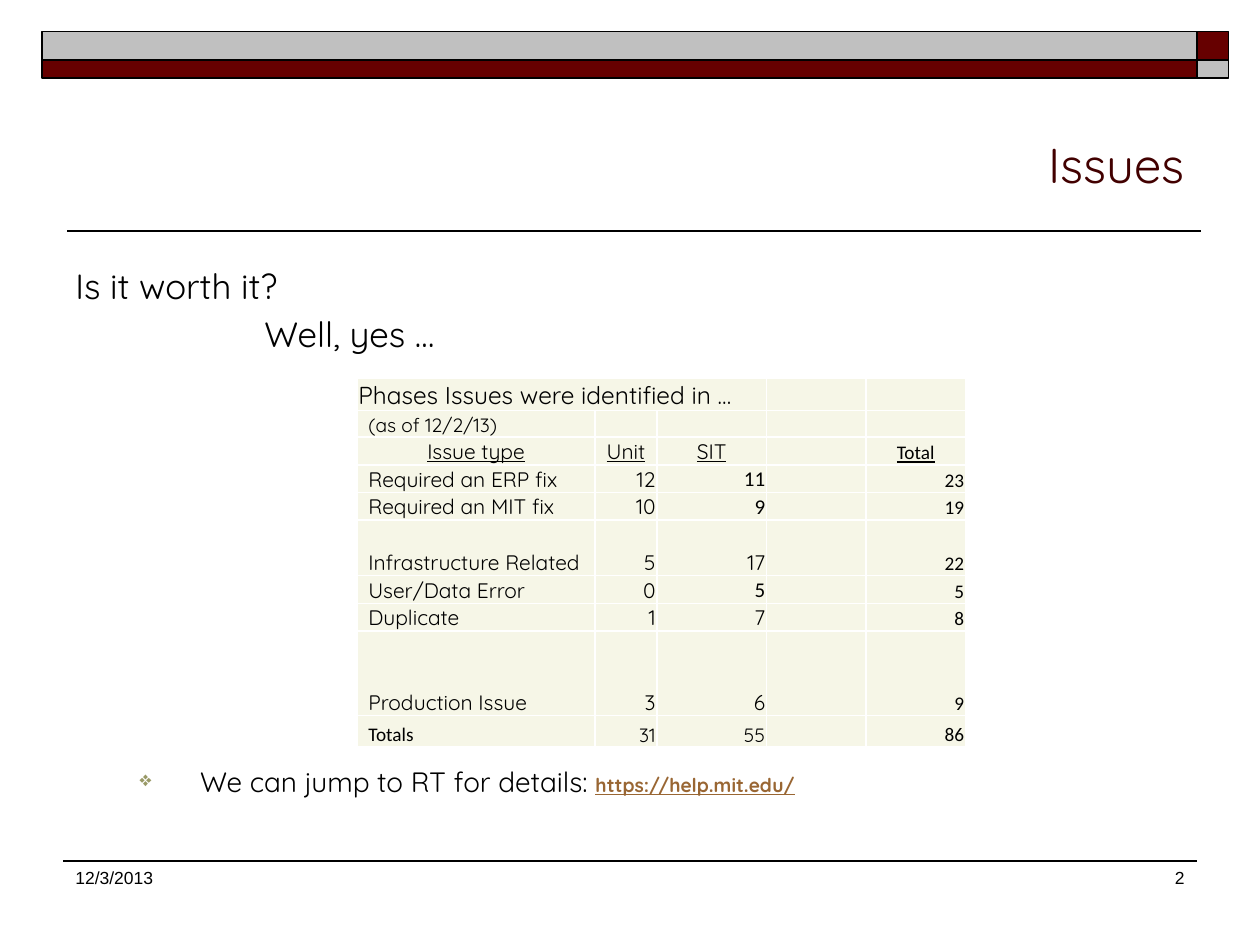
from dataclasses import dataclass

from lxml import etree
from pptx import Presentation
from pptx.dml.color import RGBColor
from pptx.enum.shapes import MSO_CONNECTOR, MSO_SHAPE
from pptx.enum.text import MSO_ANCHOR, PP_ALIGN
from pptx.oxml.ns import qn
from pptx.util import Inches, Pt

LEFT, CENTER, RIGHT = PP_ALIGN.LEFT, PP_ALIGN.CENTER, PP_ALIGN.RIGHT
TOP, BOTTOM = MSO_ANCHOR.TOP, MSO_ANCHOR.BOTTOM
RECTANGLE = MSO_SHAPE.RECTANGLE
STRAIGHT = MSO_CONNECTOR.STRAIGHT
GRID_COLUMNS, GRID_ROWS = 120, 90


@dataclass(frozen=True)
class Theme:
    ink: str = "000000"
    maroon: str = "660000"
    silver: str = "C0C0C0"
    heading: str = "420000"
    bullet: str = "999966"
    address: str = "996633"
    cell: str = "F6F6E7"
    rule: str = "FFFFFF"
    body_font: str = "Quicksand"
    figure_font: str = "Calibri"
    footer_font: str = "Arial"
    title_size: int = 28
    lead_size: int = 20
    point_size: int = 16
    caption_size: int = 14
    cell_size: int = 12
    small_size: int = 11
    footer_size: int = 10
    blank_size: int = 8


class SlideBuilder:
    def __init__(self, deck, theme):
        self.theme = theme
        self.slide = deck.slides.add_slide(deck.slide_layouts[6])
        self.column = deck.slide_width / GRID_COLUMNS
        self.row = deck.slide_height / GRID_ROWS

    def place(self, x, y, width, height):
        return (round(x * self.column), round(y * self.row),
                round(width * self.column), round(height * self.row))

    def style(self, run, size, color=None, font=None, bold=False, underline=False):
        run.font.size = Pt(size)
        run.font.name = font or self.theme.body_font
        run.font.color.rgb = RGBColor.from_string(color or self.theme.ink)
        run.font.bold = bold
        run.font.underline = underline

    def block(self, x, y, width, height, color):
        block = self.slide.shapes.add_shape(RECTANGLE, *self.place(x, y, width, height))
        block.shadow.inherit = False
        block.fill.solid()
        block.fill.fore_color.rgb = RGBColor.from_string(color)
        block.line.color.rgb = RGBColor.from_string(self.theme.ink)
        block.line.width = Pt(1)

    def rule(self, start, end, y, weight):
        x1, y1, x2, y2 = self.place(start, y, end, y)
        rule = self.slide.shapes.add_connector(STRAIGHT, x1, y1, x2, y2)
        rule.line.color.rgb = RGBColor.from_string(self.theme.ink)
        rule.line.width = Pt(weight)
        etree.SubElement(rule._element.spPr, qn("a:effectLst"))

    def text(self, area, lines, size, color=None, font=None, align=LEFT, anchor=TOP):
        frame = self.slide.shapes.add_textbox(*self.place(*area)).text_frame
        frame.word_wrap = True
        frame.vertical_anchor = anchor
        frame.text = "\n".join(lines)
        for paragraph in frame.paragraphs:
            paragraph.alignment = align
            self.style(paragraph.runs[0], size, color, font)
        return frame.paragraphs

    def indent(self, paragraph, margin, hanging=0):
        properties = paragraph._p.get_or_add_pPr()
        properties.set("marL", str(Inches(margin)))
        properties.set("indent", str(Inches(-hanging)))
        return properties

    def bullet(self, paragraph, symbol, margin, hanging):
        properties = self.indent(paragraph, margin, hanging)
        color = etree.SubElement(properties, qn("a:buClr"))
        etree.SubElement(color, qn("a:srgbClr"), val=self.theme.bullet)
        etree.SubElement(properties, qn("a:buSzPct"), val="75000")
        etree.SubElement(properties, qn("a:buChar"), char=symbol)

    def table(self, area, widths, heights):
        shape = self.slide.shapes.add_table(len(heights), len(widths), *self.place(*area))
        table = shape.table
        table.first_row = table.horz_banding = False
        for column, width in zip(table.columns, widths):
            column.width = Inches(width)
        for row, height in zip(table.rows, heights):
            row.height = Inches(height)
        return table

    def cell(self, cell, text, margin, align, size, font, underline):
        properties = cell._tc.get_or_add_tcPr()
        for side in ("a:lnL", "a:lnR", "a:lnT", "a:lnB"):
            border = etree.SubElement(properties, qn(side), w=str(Pt(1)))
            paint = etree.SubElement(border, qn("a:solidFill"))
            etree.SubElement(paint, qn("a:srgbClr"), val=self.theme.rule)
        cell.fill.solid()
        cell.fill.fore_color.rgb = RGBColor.from_string(self.theme.cell)
        cell.vertical_anchor = BOTTOM
        cell.margin_left = Inches(margin)
        cell.margin_right = cell.margin_top = Inches(0.01)
        cell.margin_bottom = 0
        paragraph = cell.text_frame.paragraphs[0]
        if text:
            paragraph.text = text
            paragraph.alignment = align
            self.style(paragraph.runs[0], size, font=font, underline=underline)
        else:
            etree.SubElement(paragraph._p, qn("a:endParaRPr"),
                             sz=str(self.theme.blank_size * 100))


ISSUES = [
    ("Phases Issues were identified in …", "", "", "", ""),
    ("(as of 12/2/13)", "", "", "", ""),
    ("Issue type", "Unit", "SIT", "", "Total"),
    ("Required an ERP fix", "12", "11", "", "23"),
    ("Required an MIT fix", "10", "9", "", "19"),
    ("Infrastructure Related", "5", "17", "", "22"),
    ("User/Data Error", "0", "5", "", "5"),
    ("Duplicate", "1", "7", "", "8"),
    ("Production Issue", "3", "6", "", "9"),
    ("Totals", "31", "55", "", "86"),
]
CAPTION_ROW, DATE_ROW, HEADER_ROW, TOTALS_ROW = 0, 1, 2, 9
TOTAL_COLUMN = 4
FIGURE_FONT_CELLS = {(3, 2), (4, 2), (6, 2), (TOTALS_ROW, 0)}
COLUMN_WIDTHS = [1.89, 0.49, 0.87, 0.79, 0.79]
ROW_HEIGHTS = [0.26, 0.21] + [0.22] * 3 + [0.44] + [0.22] * 2 + [0.67, 0.25]


def add_issue_table(builder):
    theme = builder.theme
    table = builder.table((34, 36, 58, 35), COLUMN_WIDTHS, ROW_HEIGHTS)
    row_sizes = {CAPTION_ROW: theme.caption_size, DATE_ROW: theme.small_size,
                 TOTALS_ROW: theme.small_size}
    for r, entries in enumerate(ISSUES):
        for c, entry in enumerate(entries):
            header = r == HEADER_ROW
            is_total = c == TOTAL_COLUMN
            figure = is_total or (r, c) in FIGURE_FONT_CELLS
            size = theme.small_size if is_total else row_sizes.get(r, theme.cell_size)
            margin = 0.09 if c == 0 and r not in (CAPTION_ROW, HEADER_ROW) else 0.01
            align = CENTER if header else RIGHT if c else LEFT
            font = theme.figure_font if figure else theme.body_font
            builder.cell(table.cell(r, c), entry, margin, align, size, font, header)
    table.cell(CAPTION_ROW, 0).merge(table.cell(CAPTION_ROW, 2))


def main():
    deck = Presentation()
    deck.slide_width, deck.slide_height = Inches(10), Inches(7.5)
    theme = Theme()
    builder = SlideBuilder(deck, theme)

    builder.rule(6.4, 114.4, 22, 1)
    bands = [(3, 2.75, theme.silver, theme.maroon), (5.75, 1.7, theme.maroon, theme.silver)]
    for y, height, bar, corner in bands:
        builder.block(4, y, 110, height, bar)
        builder.block(114, y, 3, height, corner)
    builder.rule(6, 114, 82, 0.75)

    footer = dict(size=theme.footer_size, font=theme.footer_font)
    builder.text((6, 82, 22, 6), ["12/3/2013"], **footer)
    builder.text((89, 82, 25, 6), ["2"], align=RIGHT, **footer)
    builder.text((6, 7, 108, 12), ["Issues"], theme.title_size, theme.heading,
                 align=RIGHT, anchor=BOTTOM)

    question, answer = builder.text((6, 24.6, 108, 10), ["Is it worth it?", "Well, yes …"],
                                    theme.lead_size)
    builder.indent(answer, 1.5)
    answer.space_before = Pt(3.5)

    add_issue_table(builder)

    details = builder.text((6, 72.6, 108, 6), ["We can jump to RT for details: "],
                           theme.point_size)[0]
    builder.bullet(details, "❖", 0.99, 0.48)
    details.line_spacing = 0.9
    address = details.add_run()
    address.text = "https://help.mit.edu/"
    builder.style(address, theme.small_size, theme.address, bold=True, underline=True)

    deck.save("out.pptx")


if __name__ == "__main__":
    main()
